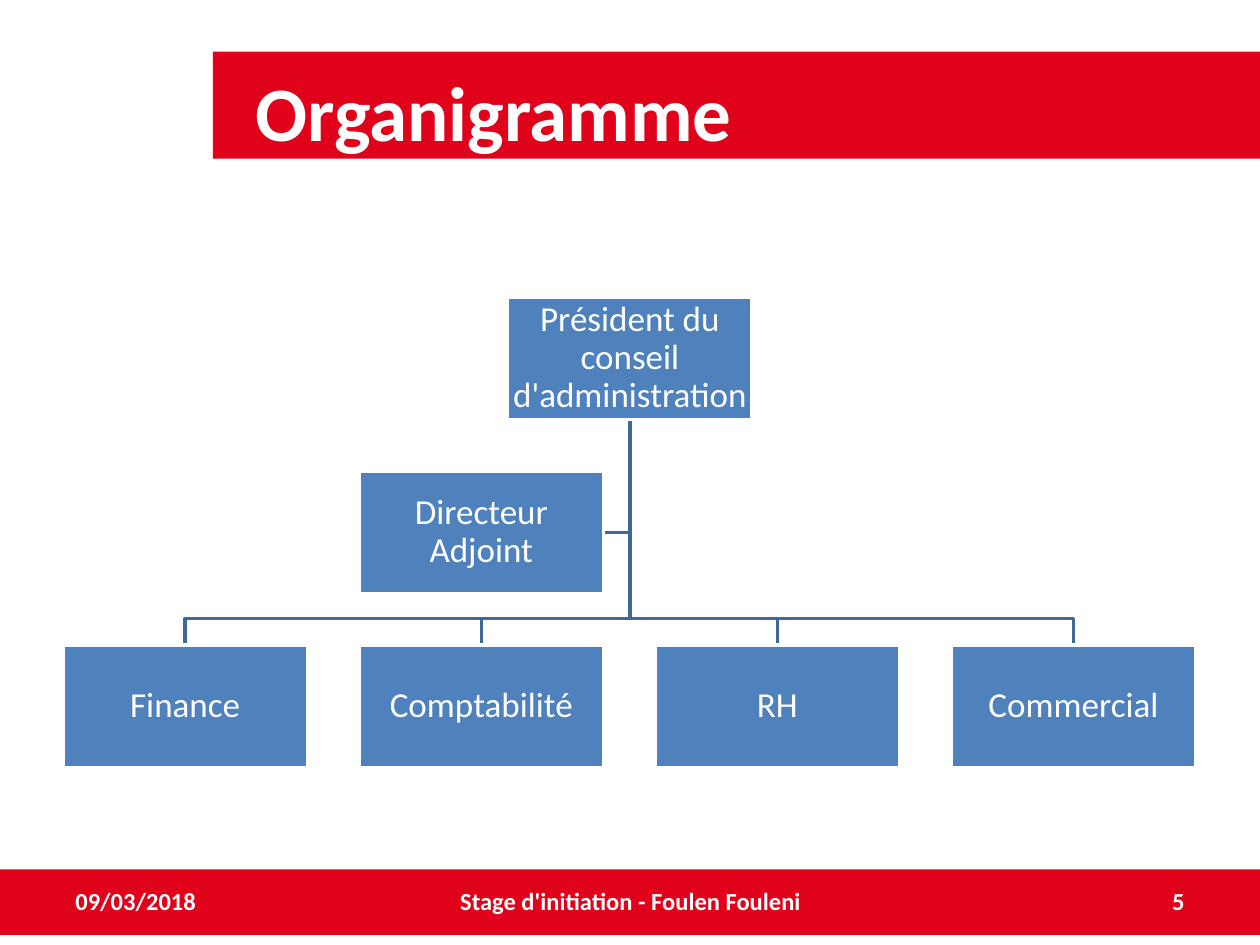
from dataclasses import dataclass

from pptx import Presentation
from pptx.dml.color import RGBColor
from pptx.enum.shapes import MSO_SHAPE as Preset
from pptx.enum.text import MSO_ANCHOR as Anchor, PP_ALIGN as Align
from pptx.shapes.autoshape import Shape
from pptx.slide import Slide
from pptx.util import Inches, Pt

COLOURS = {"red": "E0011B", "blue": "4F81BD", "link": "3F6797", "white": "FFFFFF"}
BOX_WIDTH, BOX_HEIGHT = 1.94, 0.97
FIRST_LEFT, COLUMN_STEP = 0.5, 2.35
DEPARTMENT_TOP = 5.12
BRANCH_Y = 4.91


@dataclass
class Box:
    text: str
    left: float
    top: float

    @property
    def centre_x(self) -> float:
        return self.left + BOX_WIDTH / 2

    @property
    def bottom(self) -> float:
        return self.top + BOX_HEIGHT


@dataclass
class FooterItem:
    text: str
    left: float
    width: float
    align: Align


def colour(name: str) -> RGBColor:
    return RGBColor.from_string(COLOURS[name])


def write_text(shape: Shape, text: str, align: Align, size: int,
               bold: bool = False, **frame_format) -> None:
    frame = shape.text_frame
    frame_values = {"word_wrap": True, "vertical_anchor": Anchor.MIDDLE, **frame_format}
    for name, value in frame_values.items():
        setattr(frame, name, value)
    frame.text = text
    paragraph = frame.paragraphs[0]
    paragraph.alignment = align
    font_values = {"name": "Calibri", "size": Pt(size), "bold": bold}
    for name, value in font_values.items():
        setattr(paragraph.font, name, value)
    paragraph.font.color.rgb = colour("white")


def add_rectangle(slide: Slide, left: float, top: float, width: float,
                  height: float, fill: str) -> Shape:
    shape = slide.shapes.add_shape(
        Preset.RECTANGLE, Inches(left), Inches(top), Inches(width), Inches(height))
    shape.shadow.inherit = False
    shape.fill.solid()
    shape.fill.fore_color.rgb = colour(fill)
    shape.line.fill.background()
    return shape


def add_box(slide: Slide, box: Box) -> None:
    shape = add_rectangle(slide, box.left, box.top, BOX_WIDTH, BOX_HEIGHT, "blue")
    shape.line.color.rgb = colour("white")
    shape.line.width = Pt(2)
    margins = {f"margin_{side}": Inches(0.01) for side in ("left", "top", "right", "bottom")}
    write_text(shape, box.text, Align.CENTER, 20, **margins)
    shape.text_frame.paragraphs[0].line_spacing = 0.9


def add_link(slide: Slide, points: list[tuple[float, float]]) -> None:
    start, *others = [(Inches(x), Inches(y)) for x, y in points]
    builder = slide.shapes.build_freeform(*start)
    builder.add_line_segments(others, close=False)
    shape = builder.convert_to_shape()
    shape.shadow.inherit = False
    shape.fill.background()
    shape.line.color.rgb = colour("link")
    shape.line.width = Pt(2)


def add_footer_item(slide: Slide, item: FooterItem) -> None:
    shape = slide.shapes.add_textbox(
        Inches(item.left), Inches(6.95), Inches(item.width), Inches(0.4))
    write_text(shape, item.text, item.align, 14, bold=True)


def main() -> None:
    presentation = Presentation()
    presentation.slide_width, presentation.slide_height = Inches(10), Inches(7.5)
    slide = presentation.slides.add_slide(presentation.slide_layouts[5])

    # Red bands, with the title brought in front of them
    add_rectangle(slide, -0.2, 6.9, 10.28, 0.52, "red")
    add_rectangle(slide, 1.69, 0.41, 8.43, 0.85, "red")
    title = slide.shapes.title
    place = {"left": 1.93, "top": 0.44, "width": 7.57, "height": 0.87}
    for name, value in place.items():
        setattr(title, name, Inches(value))
    write_text(title, "Organigramme", Align.LEFT, 44, bold=True)
    slide.shapes._spTree.append(title._element)

    # Members of the organisation
    president = Box("Président du conseil d'administration", 4.03, 2.36)
    deputy = Box("Directeur Adjoint", FIRST_LEFT + COLUMN_STEP, 3.74)
    departments = [
        Box(name, FIRST_LEFT + column * COLUMN_STEP, DEPARTMENT_TOP)
        for column, name in enumerate(["Finance", "Comptabilité", "RH", "Commercial"])
    ]

    # Links behind the boxes
    trunk = (president.centre_x, president.bottom)
    deputy_y = deputy.top + BOX_HEIGHT / 2
    add_link(slide, [trunk, (trunk[0], deputy_y), (deputy.left + BOX_WIDTH, deputy_y)])
    for department in departments:
        add_link(slide, [trunk, (trunk[0], BRANCH_Y), (department.centre_x, BRANCH_Y),
                         (department.centre_x, department.top)])

    for box in [president, *departments, deputy]:
        add_box(slide, box)

    # Footer
    for item in [
        FooterItem("09/03/2018", 0.5, 2.33, Align.LEFT),
        FooterItem("5", 7.17, 2.33, Align.RIGHT),
        FooterItem("Stage d'initiation - Foulen Fouleni", 3.42, 3.17, Align.CENTER),
    ]:
        add_footer_item(slide, item)

    presentation.save("out.pptx")


if __name__ == "__main__":
    main()
